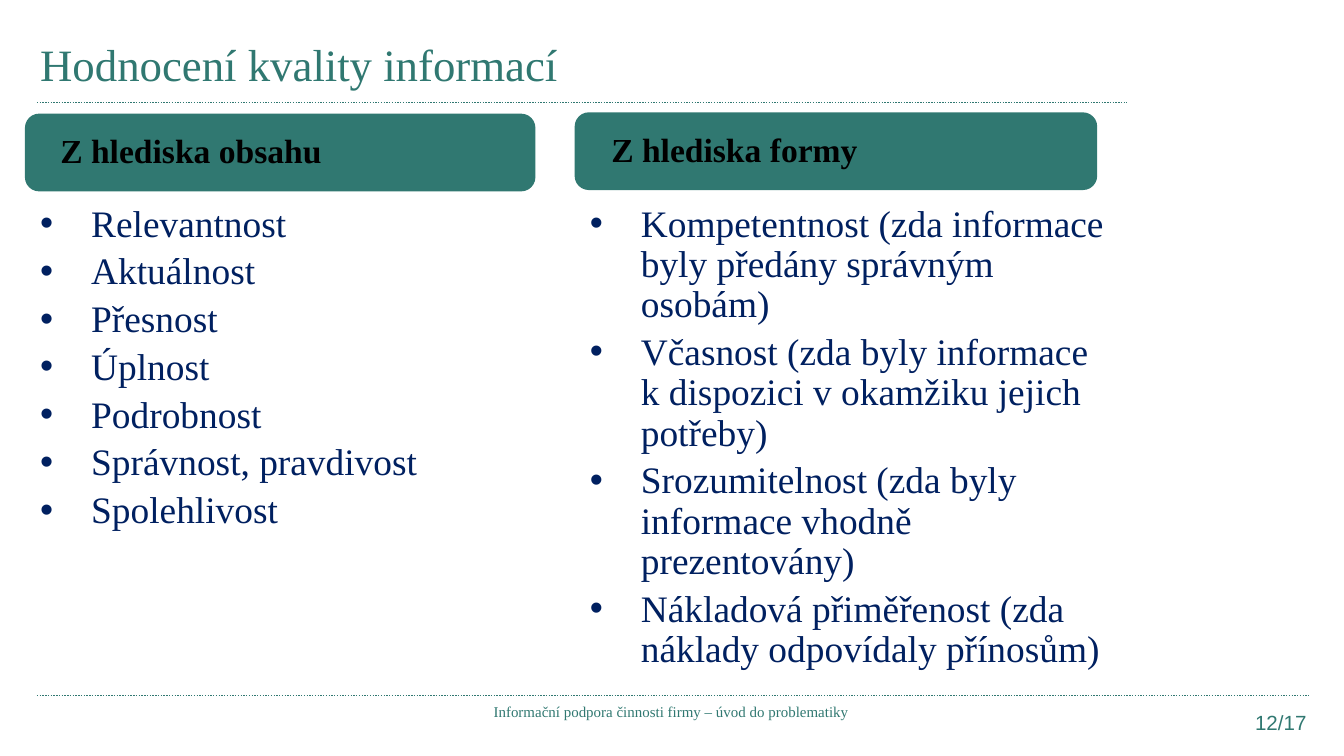
from dataclasses import dataclass

from lxml import etree
from pptx import Presentation
from pptx import util as u
from pptx.dml.color import RGBColor
from pptx.enum import dml, shapes, text
from pptx.oxml.ns import qn

# Widescreen slide; grid of 100 columns across, with square cells
COLUMNS = 100
SLIDE_WIDTH = u.Inches(10)
SLIDE_HEIGHT = SLIDE_WIDTH * 9 // 16
CELL = SLIDE_WIDTH / COLUMNS


@dataclass(frozen=True)
class Theme:
    green: RGBColor = RGBColor(0x30, 0x78, 0x71)
    navy: RGBColor = RGBColor(0x00, 0x20, 0x60)
    black: RGBColor = RGBColor(0x00, 0x00, 0x00)
    serif: str = "Times New Roman"
    sans: str = "Arial"
    title: float = 24
    heading: float = 18
    body: float = 20
    page: float = 11
    footer: float = 8


THEME = Theme()


@dataclass(frozen=True)
class Area:
    col: float
    row: float
    cols: float
    rows: float

    def box(self) -> tuple[int, ...]:
        return tuple(cells(n) for n in (self.col, self.row, self.cols, self.rows))


@dataclass(frozen=True)
class Style:
    size: float
    color: RGBColor
    font: str = THEME.serif
    bold: bool = False
    align: text.PP_ALIGN = text.PP_ALIGN.LEFT
    anchor: text.MSO_ANCHOR = text.MSO_ANCHOR.TOP
    bullet: bool = False


@dataclass(frozen=True)
class Criteria:
    banner: Area
    label: Area
    heading: str
    body: Area
    items: tuple[str, ...]


def cells(count: float) -> int:
    return round(count * CELL)


def add_bullet(paragraph) -> None:
    props = paragraph._p.get_or_add_pPr()
    props.set("marL", str(cells(3.8)))
    props.set("indent", str(cells(-3.8)))
    etree.SubElement(props, qn("a:buFont")).set("typeface", THEME.sans)
    etree.SubElement(props, qn("a:buChar")).set("char", "•")


def add_text(slide, area: Area, lines: tuple[str, ...], style: Style) -> None:
    frame = slide.shapes.add_textbox(*area.box()).text_frame
    frame.word_wrap = True
    frame.vertical_anchor = style.anchor
    for index, line in enumerate(lines):
        paragraph = frame.paragraphs[0] if index == 0 else frame.add_paragraph()
        paragraph.alignment = style.align
        if style.bullet:
            add_bullet(paragraph)
            paragraph.line_spacing = 0.9
        if index:
            paragraph.space_before = u.Pt(style.size * 0.2)
        run = paragraph.add_run()
        run.text = line
        run.font.name = style.font
        run.font.size = u.Pt(style.size)
        run.font.bold = style.bold
        run.font.color.rgb = style.color


def add_rule(slide, start: float, end: float, row: float) -> None:
    rule = slide.shapes.add_connector(
        shapes.MSO_CONNECTOR.STRAIGHT, cells(start), cells(row), cells(end), cells(row))
    rule.line.color.rgb = THEME.green
    rule.line.width = u.Pt(0.75)
    rule.line.dash_style = dml.MSO_LINE.ROUND_DOT
    etree.SubElement(rule._element.spPr, qn("a:effectLst"))


def add_banner(slide, area: Area) -> None:
    banner = slide.shapes.add_shape(shapes.MSO_SHAPE.ROUNDED_RECTANGLE, *area.box())
    banner.shadow.inherit = False
    banner.fill.solid()
    banner.fill.fore_color.rgb = THEME.green
    banner.line.color.rgb = THEME.green
    banner.line.width = u.Pt(2)


def add_criteria(slide, criteria: Criteria) -> None:
    add_banner(slide, criteria.banner)
    add_text(slide, criteria.label, (criteria.heading,),
             Style(THEME.heading, THEME.black, bold=True))
    add_text(slide, criteria.body, criteria.items,
             Style(THEME.body, THEME.navy, bullet=True))


CONTENT = Criteria(
    Area(2, 8.6, 37.7, 5.5), Area(3.5, 9.2, 29.1, 4), "Z hlediska obsahu",
    Area(2, 14.75, 40.9, 35.4),
    ("Relevantnost", "Aktuálnost", "Přesnost", "Úplnost", "Podrobnost",
     "Správnost, pravdivost", "Spolehlivost"))
FORM = Criteria(
    Area(42.9, 8.5, 38.6, 5.5), Area(44.5, 9.1, 23.6, 4), "Z hlediska formy",
    Area(42.9, 14.75, 40.9, 35.4),
    ("Kompetentnost (zda informace byly předány správným osobám)",
     "Včasnost (zda byly informace k dispozici v okamžiku jejich potřeby)",
     "Srozumitelnost (zda byly informace vhodně prezentovány)",
     "Nákladová přiměřenost (zda náklady odpovídaly přínosům)"))


def main() -> None:
    deck = Presentation()
    deck.slide_width, deck.slide_height = SLIDE_WIDTH, SLIDE_HEIGHT
    slide = deck.slides.add_slide(deck.slide_layouts[6])

    # Title and dotted rules
    add_rule(slide, 2.75, 83.85, 7.65)
    add_rule(slide, 2.75, 97.45, 51.75)
    add_text(slide, Area(2, 1.9, 79.5, 5.6), ("Hodnocení kvality informací",),
             Style(THEME.title, THEME.green, anchor=text.MSO_ANCHOR.MIDDLE))

    # Two columns of criteria
    for criteria in (CONTENT, FORM):
        add_criteria(slide, criteria)

    # Footer and page number
    add_text(slide, Area(29.5, 51.75, 40.9, 2.3),
             ("Informační podpora činnosti firmy – úvod do problematiky",),
             Style(THEME.footer, THEME.green, align=text.PP_ALIGN.CENTER))
    add_text(slide, Area(92.2, 52.35, 6.2, 3.1), ("12/17",),
             Style(THEME.page, THEME.green, THEME.sans, align=text.PP_ALIGN.CENTER))

    deck.save("out.pptx")


if __name__ == "__main__":
    main()
